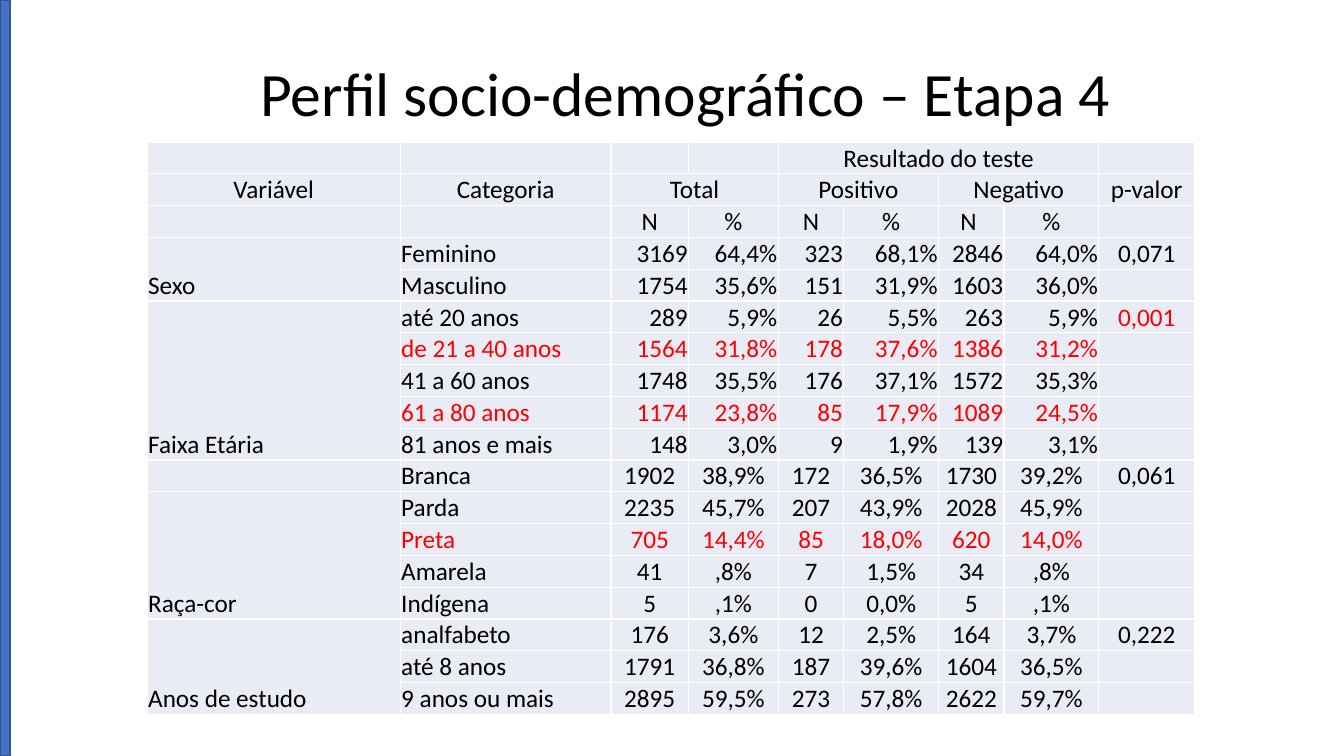
from pptx import Presentation
from pptx.dml.color import RGBColor
from pptx.enum.shapes import MSO_SHAPE as Shape
from pptx.enum.text import MSO_ANCHOR as Anchor, PP_ALIGN as Align
from pptx.util import Inches, Pt

BLACK, RED, PALE = "000000", "FF0000", "E9EBF5"


def rgb(value):
    return RGBColor.from_string(value)


def write(frame, text, size=18, color=BLACK, align=Align.LEFT, spacing=None):
    paragraph = frame.paragraphs[0]
    paragraph.alignment = align
    paragraph.line_spacing = spacing
    run = paragraph.add_run()
    run.text = text
    run.font.name = "Calibri"
    run.font.size = Pt(size)
    run.font.color.rgb = rgb(color)


deck = Presentation()
deck.slide_width, deck.slide_height = Inches(13.33), Inches(7.5)
slide = deck.slides.add_slide(deck.slide_layouts[5])

heading = slide.shapes.title
heading.left, heading.top = Inches(1.05), Inches(0.23)
heading.width, heading.height = Inches(11.5), Inches(1.45)
heading.text_frame.vertical_anchor = Anchor.MIDDLE
write(heading.text_frame, "Perfil socio-demográfico – Etapa 4", size=44,
      align=Align.CENTER, spacing=0.9)

header_rows = [
    ["", "", "", "", "Resultado do teste", "", "", "", ""],
    ["Variável", "Categoria", "Total", "", "Positivo", "", "Negativo", "", "p-valor"],
    ["", "", "N", "%", "N", "%", "N ", "%", ""],
]
header_spans = [(0, 4, 7), (1, 2, 3), (1, 4, 5), (1, 6, 7)]

category_rows = [
    ["Feminino", "3169", "64,4%", "323", "68,1%", "2846", "64,0%", "0,071"],
    ["Masculino", "1754", "35,6%", "151", "31,9%", "1603", "36,0%", ""],
    ["até 20 anos", "289", "5,9%", "26", "5,5%", "263", "5,9%", "0,001"],
    ["de 21 a 40 anos", "1564", "31,8%", "178", "37,6%", "1386", "31,2%", ""],
    ["41 a 60 anos", "1748", "35,5%", "176", "37,1%", "1572", "35,3%", ""],
    ["61 a 80 anos", "1174", "23,8%", "85", "17,9%", "1089", "24,5%", ""],
    ["81 anos e mais", "148", "3,0%", "9", "1,9%", "139", "3,1%", ""],
    ["Branca", "1902", "38,9%", "172", "36,5%", "1730", "39,2%", "0,061"],
    ["Parda", "2235", "45,7%", "207", "43,9%", "2028", "45,9%", ""],
    ["Preta", "705", "14,4%", "85", "18,0%", "620", "14,0%", ""],
    ["Amarela", "41", ",8%", "7", "1,5%", "34", ",8%", ""],
    ["Indígena", "5", ",1%", "0", "0,0%", "5", ",1%", ""],
    ["analfabeto", "176", "3,6%", "12", "2,5%", "164", "3,7%", "0,222"],
    ["até 8 anos", "1791", "36,8%", "187", "39,6%", "1604", "36,5%", ""],
    ["9 anos ou mais", "2895", "59,5%", "273", "57,8%", "2622", "59,7%", ""],
]
variable_spans = {"Sexo": (3, 4), "Faixa Etária": (5, 9),
                  "Raça-cor": (11, 14), "Anos de estudo": (15, 17)}
red_texts = {"de 21 a 40 anos", "61 a 80 anos", "Preta", "0,001"}
first_centered_row = 10

column_widths = [2.51, 2.09, 0.77, 0.89, 0.65, 0.94, 0.65, 0.94, 0.95]
variable_at = {first: name for name, (first, last) in variable_spans.items()}
profile_rows = header_rows + [[variable_at.get(number, "")] + values
                              for number, values in enumerate(category_rows, len(header_rows))]

profile = slide.shapes.add_table(len(profile_rows), len(column_widths), Inches(1.46),
                                 Inches(1.41), Inches(10.41), Inches(5.59)).table
profile.first_row = False
profile.horz_banding = False
for column, width in zip(profile.columns, column_widths):
    column.width = Inches(width)

for row, values in enumerate(profile_rows):
    is_header = row < len(header_rows)
    row_color = RED if values[1] in red_texts else BLACK
    for col, text in enumerate(values):
        cell = profile.cell(row, col)
        cell.fill.solid()
        cell.fill.fore_color.rgb = rgb(PALE)
        cell.margin_left = cell.margin_right = cell.margin_top = Inches(0.01)
        cell.margin_bottom = 0
        cell.vertical_anchor = Anchor.BOTTOM if is_header or col == 0 else Anchor.TOP
        if not text:
            continue
        if is_header or col == 8:
            align = Align.CENTER
        elif col < 2:
            align = Align.LEFT
        else:
            align = Align.CENTER if row >= first_centered_row else Align.RIGHT
        color = RED if text in red_texts else row_color if col else BLACK
        write(cell.text_frame, text, color=color, align=align)

for row, first, last in header_spans:
    profile.cell(row, first).merge(profile.cell(row, last))
for first, last in variable_spans.values():
    profile.cell(first, 0).merge(profile.cell(last, 0))

side_bar = slide.shapes.add_shape(Shape.RECTANGLE, 0, 0, Inches(0.1), Inches(7.5))
side_bar.shadow.inherit = False
side_bar.fill.solid()
side_bar.fill.fore_color.rgb = rgb("4472C4")
side_bar.line.color.rgb = rgb("325491")
side_bar.line.width = Pt(1)

deck.save("out.pptx")
